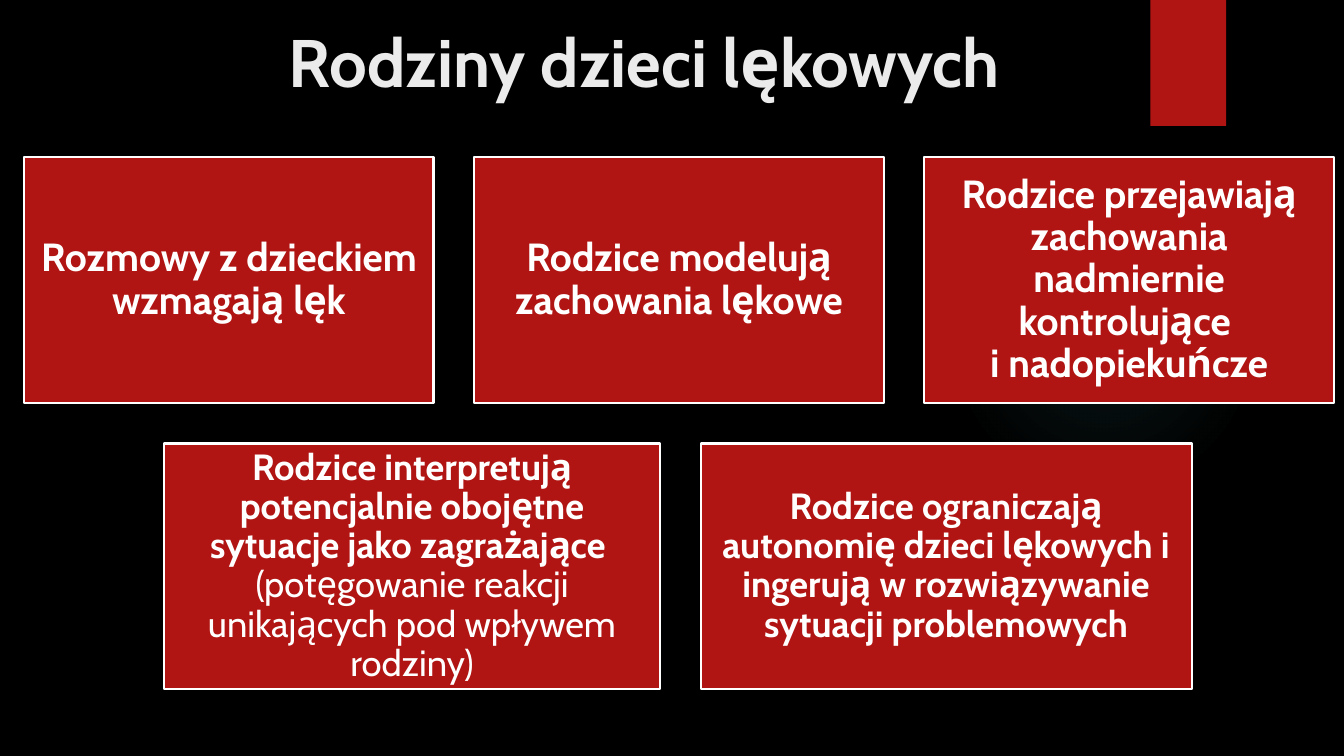
import pptx
import pptx.dml.color
import pptx.enum.shapes
import pptx.enum.text
import pptx.oxml
import pptx.oxml.ns
import pptx.util

Pt = pptx.util.Pt
MSO_SHAPE = pptx.enum.shapes.MSO_SHAPE
ANCHOR = pptx.enum.text.MSO_ANCHOR
RED, WHITE, PALE, TEAL = "B01513", "FFFFFF", "EBEBEB", "50B9C1"


def color(hex_value):
    return pptx.dml.color.RGBColor.from_string(hex_value)


def write(paragraph, text, size=28, fill=WHITE, bold=True):
    """Append centred text; each newline becomes a line break."""
    paragraph.alignment = pptx.enum.text.PP_ALIGN.CENTER
    for index, line in enumerate(text.split("\n")):
        if index:
            paragraph.add_line_break()
        if line:
            run = paragraph.add_run()
            run.text = line
            run.font.name = "Cabin"
            run.font.size = Pt(size)
            run.font.bold = bold
            run.font.color.rgb = color(fill)


deck = pptx.Presentation()
deck.slide_width, deck.slide_height = Pt(960), Pt(540)
slide = deck.slides.add_slide(deck.slide_layouts[5])
slide.background.fill.solid()
slide.background.fill.fore_color.rgb = color("000000")

# Faint round glow behind the cards
glow = slide.shapes.add_shape(
    MSO_SHAPE.OVAL, Pt(677.5), Pt(131.8), Pt(221.8), Pt(221.8))
glow.shadow.inherit = False
glow.line.fill.background()
glow.fill.background()
stops = "".join(
    f'<a:gs pos="{position * 1000}"><a:srgbClr val="{TEAL}">'
    f'<a:alpha val="{opacity * 1000}"/></a:srgbClr></a:gs>'
    for position, opacity in ((0, 7), (36, 6), (69, 0)))
gradient = pptx.oxml.parse_xml(
    f'<a:gradFill {pptx.oxml.ns.nsdecls("a")}><a:gsLst>{stops}</a:gsLst>'
    '<a:path path="circle"><a:fillToRect l="50000" t="50000" r="50000" '
    'b="50000"/></a:path></a:gradFill>')
no_fill = glow.element.spPr.find(pptx.oxml.ns.qn("a:noFill"))
glow.element.spPr.replace(no_fill, gradient)

ribbon = slide.shapes.add_shape(
    MSO_SHAPE.RECTANGLE, Pt(821.8), 0, Pt(54), Pt(90))
ribbon.shadow.inherit = False
ribbon.fill.solid()
ribbon.fill.fore_color.rgb = color(RED)
ribbon.line.fill.background()

title = slide.shapes.title
title.left, title.top = Pt(90), Pt(10.8)
title.width, title.height = Pt(740.9), Pt(110.2)
title.text_frame.vertical_anchor = ANCHOR.TOP
title.text_frame.auto_size = pptx.enum.text.MSO_AUTO_SIZE.NONE
write(title.text_frame.paragraphs[0], "Rodziny dzieci lękowych",
      size=48, fill=PALE)

# Each row: left, top, text size, inset, cards (width, bold text, plain text)
card_height, card_gap = 175.7, 29.1
rows = [
    (17.3, 112.3, 28, 8.4, [
        (292.4, "Rozmowy z dzieckiem wzmagają lęk", ""),
        (292.4, "Rodzice modelują zachowania lękowe", ""),
        (292.4, "Rodzice przejawiają zachowania nadmiernie kontrolujące \n"
                "i nadopiekuńcze", ""),
    ]),
    (117.3, 316.8, 26, 7.8, [
        (354.2, "Rodzice interpretują potencjalnie obojętne sytuacje "
                "jako zagrażające \n",
         "(potęgowanie reakcji unikających pod wpływem rodziny)"),
        (350.6, "Rodzice ograniczają autonomię dzieci lękowych i ingerują "
                "w rozwiązywanie sytuacji problemowych", ""),
    ]),
]
for left, top, size, inset, cards in rows:
    for width, trait, detail in cards:
        card = slide.shapes.add_shape(
            MSO_SHAPE.RECTANGLE, Pt(left), Pt(top), Pt(width), Pt(card_height))
        card.shadow.inherit = False
        card.fill.solid()
        card.fill.fore_color.rgb = color(RED)
        card.line.color.rgb = color(WHITE)
        card.line.width = Pt(1.5)
        frame = card.text_frame
        frame.word_wrap = True
        frame.vertical_anchor = ANCHOR.MIDDLE
        frame.margin_left = frame.margin_right = Pt(inset)
        frame.margin_top = frame.margin_bottom = Pt(inset)
        paragraph = frame.paragraphs[0]
        paragraph.line_spacing = 0.9
        write(paragraph, trait, size=size)
        write(paragraph, detail, size=size, bold=False)
        left += width + card_gap

deck.save("out.pptx")
